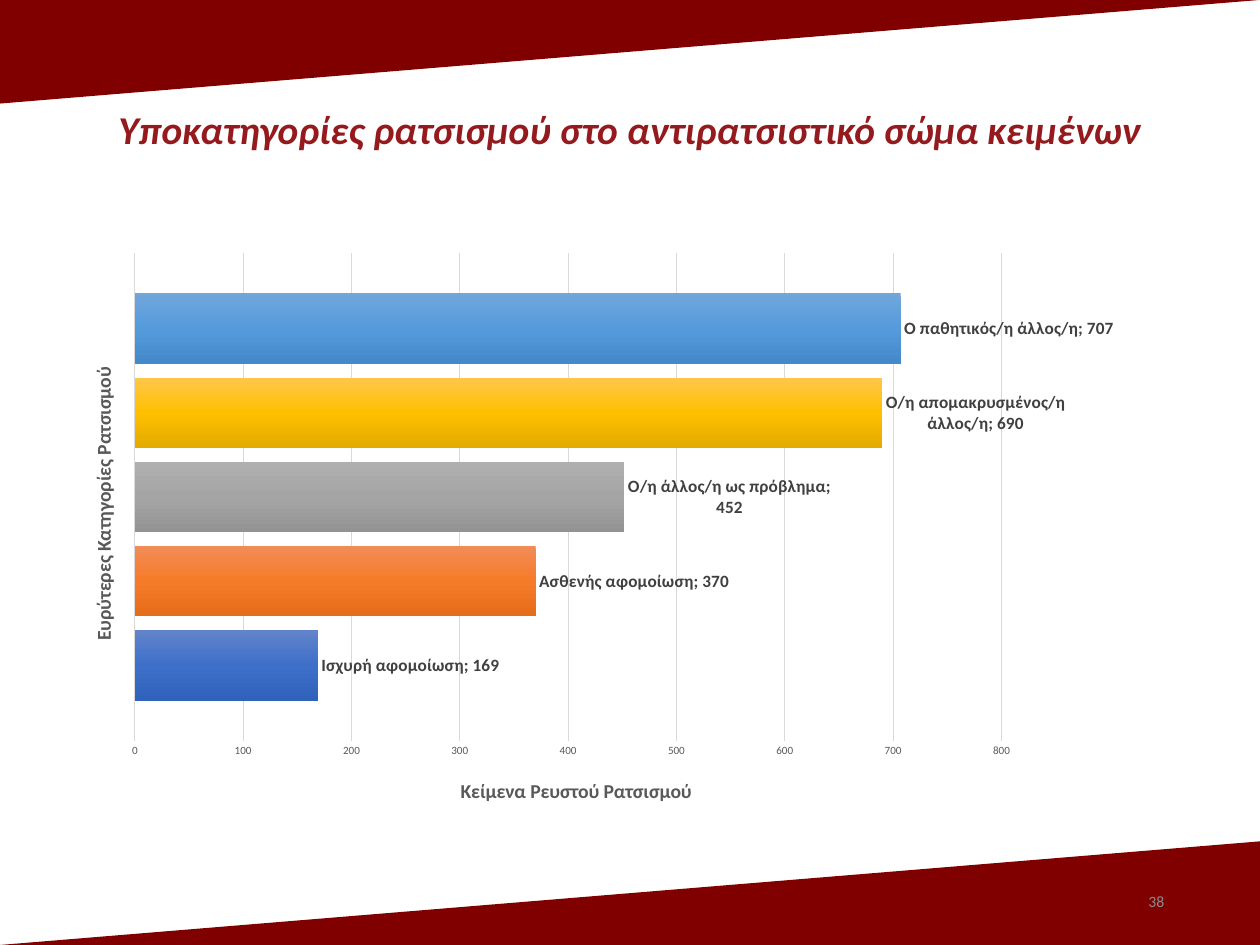
from lxml.etree import SubElement
from pptx import Presentation
from pptx.chart.data import CategoryChartData
from pptx.dml.color import RGBColor
from pptx.enum.chart import XL_CHART_TYPE, XL_LABEL_POSITION, XL_TICK_MARK
from pptx.enum.shapes import MSO_SHAPE
from pptx.enum.text import MSO_ANCHOR, MSO_AUTO_SIZE, PP_ALIGN
from pptx.oxml.ns import qn
from pptx.util import Inches, Pt

WIDTH, HEIGHT = 14.22, 10.67
BAND = 1.17
FONT = "Calibri"
MAROON = RGBColor(0x80, 0x00, 0x00)
RED = RGBColor(0x94, 0x1A, 0x1D)
SILVER = RGBColor(0x8C, 0x8C, 0x8C)
DARK = RGBColor(0x40, 0x40, 0x40)
GRAY = RGBColor(0x59, 0x59, 0x59)
PALE = RGBColor(0xD9, 0xD9, 0xD9)


def shades(*codes):
    """Turn hex codes into the colours of a gradient."""
    return [RGBColor.from_string(code) for code in codes]


BARS = [
    ("Ισχυρή αφομοίωση", 169, shades("6183CB", "3E70CA", "3062BB")),
    ("Ασθενής αφομοίωση", 370, shades("F18C57", "F67B28", "E56C19")),
    ("Ο/η άλλος/η ως πρόβλημα", 452, shades("AFAFAF", "A5A5A5", "939393")),
    ("Ο/η απομακρυσμένος/η άλλος/η", 690, shades("FFC64B", "FFC000", "E3AB00")),
    ("Ο παθητικός/η άλλος/η", 707, shades("71A6DB", "559BDB", "448ACA")),
]


def style(font, size, color, bold=False, italic=False):
    """Set the look of a font."""
    font.name, font.size = FONT, Pt(size)
    font.bold, font.italic = bold, italic
    font.color.rgb = color


def write(frame, text, align=None, **look):
    """Put one formatted line of text into a frame."""
    line = frame.paragraphs[0]
    line.alignment = align
    run = line.add_run()
    run.text = text
    style(run.font, **look)


def place(shape, box):
    """Move a shape to a box given in inches."""
    shape.left, shape.top, shape.width, shape.height = map(Inches, box)


def add_band(slide, box, flip):
    """Draw one slanted band, flipped along the named axis."""
    band = slide.shapes.add_shape(MSO_SHAPE.RIGHT_TRIANGLE, *map(Inches, box))
    band.shadow.inherit = False
    band.fill.solid()
    band.fill.fore_color.rgb = MAROON
    band.line.fill.background()
    band._element.spPr.xfrm.set(flip, "1")


def add_title(slide, box, text):
    """Fill the title placeholder."""
    title = slide.shapes.title
    place(title, box)
    frame = title.text_frame
    frame.margin_left = frame.margin_right = Inches(0.06)
    frame.margin_top = frame.margin_bottom = Inches(0.06)
    frame.vertical_anchor = MSO_ANCHOR.MIDDLE
    frame.auto_size = MSO_AUTO_SIZE.NONE
    write(frame, text, align=PP_ALIGN.CENTER, size=32, color=RED,
          bold=True, italic=True)


def add_number(slide, box, text):
    """Write the page number."""
    frame = slide.shapes.add_textbox(*map(Inches, box)).text_frame
    frame.word_wrap = True
    frame.vertical_anchor = MSO_ANCHOR.MIDDLE
    write(frame, text, align=PP_ALIGN.RIGHT, size=12.8, color=SILVER)


def set_layout(part, **marks):
    """Give a chart part a manual layout as shares of the chart."""
    layout = part.find(qn("c:layout"))
    if layout is None:
        layout = SubElement(part, qn("c:layout"))
        part.insert(0, layout)
    manual = SubElement(layout, qn("c:manualLayout"))
    for name, mark in marks.items():
        SubElement(manual, qn("c:" + name)).set("val", str(mark))


def name_axis(axis, text, x, y):
    """Give an axis its title at a set place."""
    title = axis.axis_title
    write(title.text_frame, text, size=16, color=GRAY, bold=True)
    set_layout(title._element, xMode="edge", yMode="edge", x=x, y=y)
    return title


def shade(series, colors):
    """Fill a bar with an even gradient from top to bottom."""
    grad = SubElement(series._element.get_or_add_spPr(), qn("a:gradFill"))
    stops = SubElement(grad, qn("a:gsLst"))
    for i, color in enumerate(colors):
        stop = SubElement(stops, qn("a:gs"), pos=str(i * 50000))
        SubElement(stop, qn("a:srgbClr"), val=str(color))
    SubElement(grad, qn("a:lin"), ang="5400000", scaled="0")


def add_bars(slide, box):
    """Draw the bar chart with its labels and axes."""
    data = CategoryChartData()
    data.categories = ["1"]
    for name, value, colors in BARS:
        data.add_series(name, [value])
    chart = slide.shapes.add_chart(
        XL_CHART_TYPE.BAR_CLUSTERED, *map(Inches, box), data).chart
    chart.has_legend = chart.has_title = False
    chart.font.name, chart.font.size = FONT, Pt(10)

    plot = chart.plots[0]
    plot.gap_width, plot.overlap = 115, -20
    plot.vary_by_categories = False
    for series, (name, value, colors) in zip(plot.series, BARS):
        shade(series, colors)
        labels = series.data_labels
        labels.show_series_name = labels.show_value = True
        labels.position = XL_LABEL_POSITION.OUTSIDE_END
        style(labels.font, size=14, color=DARK, bold=True)

    area = chart._chartSpace.chart.plotArea
    set_layout(area, layoutTarget="inner", xMode="edge", yMode="edge",
               x=0.053, y=0.095, w=0.772, h=0.773)

    scale = chart.value_axis
    scale.minimum_scale, scale.maximum_scale = 0, 800
    scale.major_unit = 100
    scale.major_tick_mark = scale.minor_tick_mark = XL_TICK_MARK.NONE
    scale.format.line.fill.background()
    grid = scale.major_gridlines.format.line
    grid.color.rgb, grid.width = PALE, Pt(0.75)
    style(scale.tick_labels.font, size=9, color=GRAY)
    name_axis(scale, "Κείμενα Ρευστού Ρατσισμού", 0.34, 0.92)

    groups = chart.category_axis
    groups.visible = False
    side = name_axis(groups, "Ευρύτερες Κατηγορίες Ρατσισμού", 0.01, 0.27)
    body = side.text_frame._txBody.bodyPr
    body.set("rot", "-5400000")
    body.set("vert", "horz")


def main():
    """Build the slide and save it."""
    deck = Presentation()
    deck.slide_width, deck.slide_height = Inches(WIDTH), Inches(HEIGHT)
    slide = deck.slides.add_slide(deck.slide_layouts[5])
    add_band(slide, (0, HEIGHT - BAND, WIDTH, BAND), "flipH")
    add_band(slide, (0, 0, WIDTH, BAND), "flipV")
    add_title(slide, (0, 1.13, WIDTH, 0.65),
              "Υποκατηγορίες ρατσισμού στο αντιρατσιστικό σώμα κειμένων")
    add_number(slide, (10.04, 9.89, 3.2, 0.57), "38")
    add_bars(slide, (0.85, 2.18, 12.67, 7.13))
    deck.save("out.pptx")


if __name__ == "__main__":
    main()
